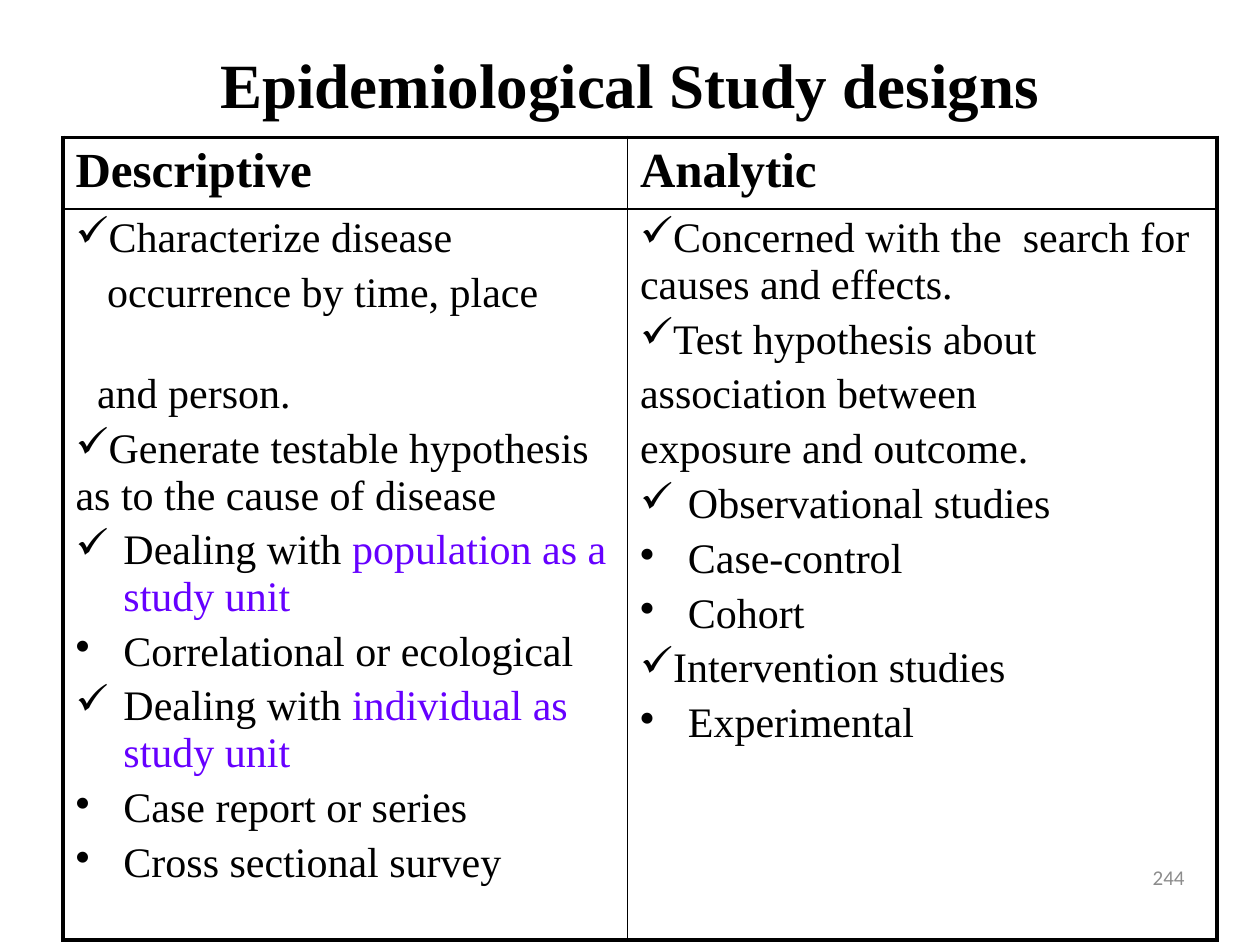
from lxml import etree
from pptx import Presentation
from pptx.dml.color import RGBColor
from pptx.enum.text import MSO_ANCHOR, PP_ALIGN
from pptx.oxml.ns import qn
from pptx.util import Inches, Pt

CENTER, RIGHT = PP_ALIGN.CENTER, PP_ALIGN.RIGHT
MIDDLE = MSO_ANCHOR.MIDDLE
BLACK = RGBColor(0x00, 0x00, 0x00)
VIOLET = RGBColor(0x66, 0x00, 0xFF)
GRAY = RGBColor(0x8C, 0x8C, 0x8C)
SERIF, SANS = "Times New Roman", "Calibri"

# Content: paragraphs are (bullet, left margin, hanging, text, violet text)
TITLE = "Epidemiological Study designs"
PAGE_NUMBER = "244"
HEADERS = ["Descriptive", "Analytic"]
CHECK, DOT, HANG = "✓", "•", 0.38
DESCRIPTIVE = [
    (CHECK, 0, 0, "Characterize disease", ""),
    ("", 0.25, 0, "occurrence by time, place", ""),
    ("", 0.17, 0, "and person.", ""),
    (CHECK, 0, 0, "Generate testable hypothesis as to the cause of disease", ""),
    (CHECK, HANG, HANG, "Dealing with ", "population as a study unit"),
    (DOT, HANG, HANG, "Correlational or ecological", ""),
    (CHECK, HANG, HANG, "Dealing with ", "individual as study unit"),
    (DOT, HANG, HANG, "Case report or series", ""),
    (DOT, HANG, HANG, "Cross sectional survey", ""),
]
ANALYTIC = [
    (CHECK, 0, 0, "Concerned with the  search for causes and effects.", ""),
    (CHECK, 0, 0, "Test hypothesis about", ""),
    ("", 0, 0, "association between", ""),
    ("", 0, 0, "exposure and outcome.", ""),
    (CHECK, HANG, HANG, "Observational studies", ""),
    (DOT, HANG, HANG, "Case-control", ""),
    (DOT, HANG, HANG, "Cohort", ""),
    (CHECK, 0, 0, "Intervention studies", ""),
    (DOT, HANG, HANG, "Experimental", ""),
]
EXTRA_SPACE = {"and person.": 26.5}  # one empty line above, in points
COL_WIDTHS, ROW_HEIGHTS = [4.48, 4.68], [0.57, 5.5]
OUTER, INNER = 2.25, 1

HEAD = dict(name=SERIF, size=Pt(28), bold=True)
BODY = dict(name=SERIF, size=Pt(24), bold=False)


def add_run(p, text, style, color=BLACK):
    r = p.add_run()
    r.text = text
    for key, value in style.items():
        setattr(r.font, key, value)
    r.font.color.rgb = color


def add_text(s, box, text, align, style, color=BLACK):
    tf = s.shapes.add_textbox(*map(Inches, box)).text_frame
    tf.word_wrap = True
    tf.vertical_anchor = MIDDLE
    p = tf.paragraphs[0]
    p.alignment = align
    add_run(p, text, style, color)


def set_bullet(p, char, left, hanging):
    pPr = p._p.get_or_add_pPr()
    pPr.set("marL", str(Inches(left)))
    pPr.set("indent", str(-Inches(hanging)))
    if char:
        etree.SubElement(pPr, qn("a:buChar")).set("char", char)
    else:
        etree.SubElement(pPr, qn("a:buNone"))


def set_borders(cell, widths):
    tcPr = cell._tc.get_or_add_tcPr()
    for i, (side, width) in enumerate(widths.items()):
        ln = etree.Element(qn(f"a:ln{side}"), w=str(Pt(width)))
        fill = etree.SubElement(ln, qn("a:solidFill"))
        etree.SubElement(fill, qn("a:srgbClr")).set("val", str(BLACK))
        tcPr.insert(i, ln)


def fill_cell(cell, paragraphs, style):
    tf = cell.text_frame
    for i, (char, left, hanging, text, accent) in enumerate(paragraphs):
        p = tf.add_paragraph() if i else tf.paragraphs[0]
        p.space_before = Pt(style["size"].pt * 0.2 + EXTRA_SPACE.get(text, 0))
        set_bullet(p, char, left, hanging)
        add_run(p, text, style)
        if accent:
            add_run(p, accent, style, VIOLET)


prs = Presentation()
prs.slide_width, prs.slide_height = Inches(10), Inches(7.5)
s = prs.slides.add_slide(prs.slide_layouts[6])

# Title
add_text(s, (0.5, 0.25, 9, 0.83), TITLE, CENTER,
         dict(name=SERIF, size=Pt(36), bold=True))

# Comparison table
table = s.shapes.add_table(2, 2, Inches(0.5), Inches(1.09),
                           Inches(sum(COL_WIDTHS)), Inches(sum(ROW_HEIGHTS))).table
table.first_row = table.horz_banding = False
for col, width in zip(table.columns, COL_WIDTHS):
    col.width = Inches(width)
for row, height in zip(table.rows, ROW_HEIGHTS):
    row.height = Inches(height)

for c, (header, body) in enumerate(zip(HEADERS, [DESCRIPTIVE, ANALYTIC])):
    fill_cell(table.cell(0, c), [("", 0, 0, header, "")], HEAD)
    fill_cell(table.cell(1, c), body, BODY)
    for r in range(2):
        cell = table.cell(r, c)
        cell.fill.background()
        set_borders(cell, {"L": INNER if c else OUTER, "R": OUTER if c else INNER,
                           "T": INNER if r else OUTER, "B": OUTER if r else INNER})

# Page number
add_text(s, (7.17, 6.76, 2.33, 0.4), PAGE_NUMBER, RIGHT,
         dict(name=SANS, size=Pt(12)), GRAY)

prs.save("out.pptx")
